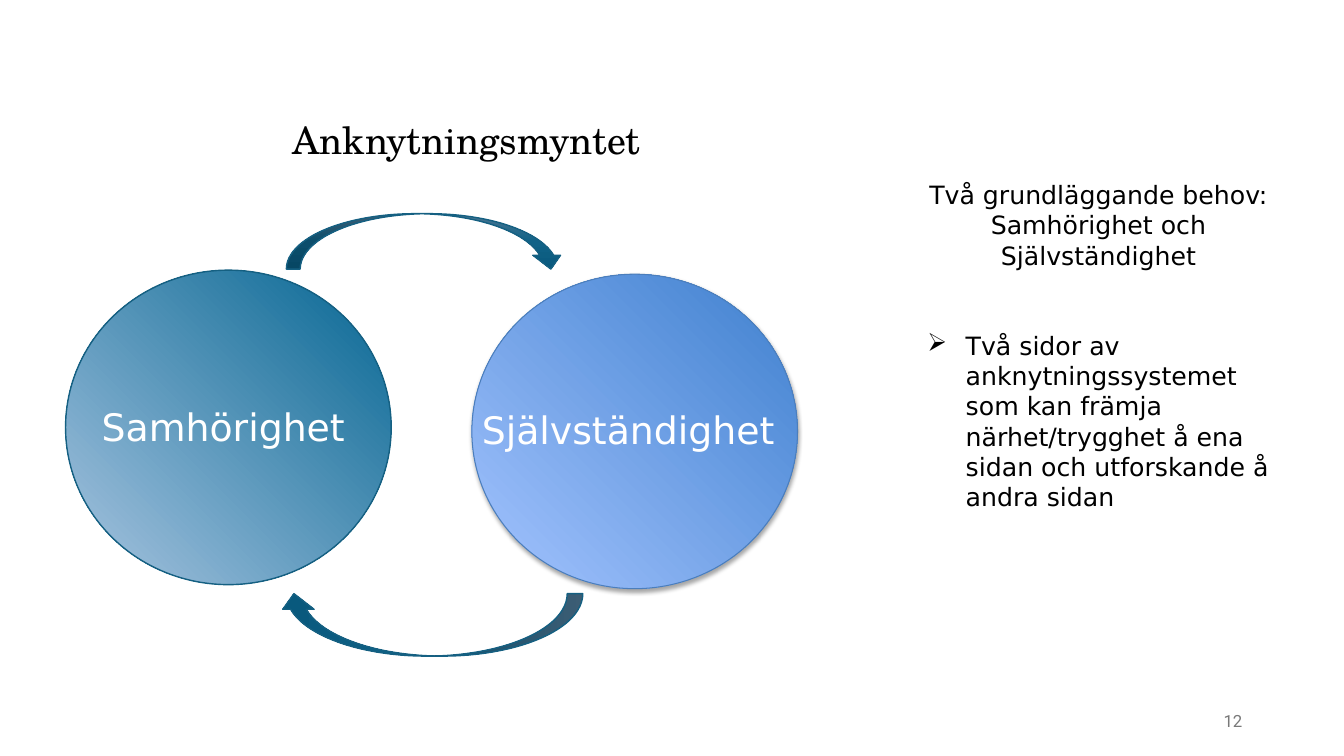
"""Build the attachment-coin slide: two circles of needs joined by curved arrows."""
import copy

import pptx
import pptx.dml.color
import pptx.enum.shapes
import pptx.enum.text
import pptx.oxml
import pptx.oxml.ns
import pptx.util

RGBColor = pptx.dml.color.RGBColor
Pt = pptx.util.Pt
SHAPE = pptx.enum.shapes.MSO_SHAPE
ANCHOR = pptx.enum.text.MSO_ANCHOR
ALIGN = pptx.enum.text.PP_ALIGN
qn = pptx.oxml.ns.qn
NAMESPACE = pptx.oxml.ns.nsdecls("a")

BLACK = RGBColor(0x00, 0x00, 0x00)
WHITE = RGBColor(0xFF, 0xFF, 0xFF)
GREY = RGBColor(0x79, 0x79, 0x79)
TEAL_LINE = RGBColor(0x15, 0x60, 0x82)
BLUE_LINE = RGBColor(0x4B, 0x7E, 0xBC)
TEAL_FADE = [RGBColor(0x05, 0x66, 0x92), RGBColor(0xA9, 0xC5, 0xE1)]
BLUE_FADE = [RGBColor(0x3F, 0x80, 0xCE), RGBColor(0xA4, 0xC4, 0xFF)]
ARROW_FADE = [RGBColor(0x4C, 0x75, 0x91), RGBColor(0x10, 0x62, 0x87), RGBColor(0x09, 0x59, 0x7D)]

deck = pptx.Presentation()
deck.slide_width = pptx.util.Inches(13.33)
deck.slide_height = pptx.util.Inches(7.5)
page = deck.slides.add_slide(deck.slide_layouts[6])


def place(left, top, width, height):
    """Turn percentages of the slide into lengths."""
    column, row = deck.slide_width / 100, deck.slide_height / 100
    return int(left * column), int(top * row), int(width * column), int(height * row)


def add_text(area, paragraphs, font, size, color, anchor=ANCHOR.TOP):
    """Add a wrapped text box and return its paragraphs."""
    frame = page.shapes.add_textbox(*place(*area)).text_frame
    frame.word_wrap = True
    frame.vertical_anchor = anchor
    for number, words in enumerate(paragraphs):
        para = frame.add_paragraph() if number else frame.paragraphs[0]
        span = para.add_run()
        span.text = words
        span.font.name = font
        span.font.size = Pt(size)
        span.font.color.rgb = color
    return frame.paragraphs


figures = [
    (SHAPE.OVAL, (4.88, 35.73, 24.23, 41.6), TEAL_FADE, 225, TEAL_LINE, 1, 0),
    (SHAPE.OVAL, (35.11, 36.27, 24.23, 41.6), BLUE_FADE, 225, BLUE_LINE, 0.75, 0),
    (SHAPE.CURVED_DOWN_ARROW, (21.31, 28.27, 20.71, 7.33), ARROW_FADE, 270, TEAL_LINE, 1, 0),
    (SHAPE.CURVED_LEFT_ARROW, (29.71, 62.53, 4.65, 40.27), ARROW_FADE, 270, TEAL_LINE, 1, 90),
]
for kind, area, fade, angle, line_color, line_width, rotation in figures:
    figure = page.shapes.add_shape(kind, *place(*area))
    figure.rotation = rotation
    figure.shadow.inherit = False
    figure.line.color.rgb = line_color
    figure.line.width = Pt(line_width)
    figure.fill.gradient()
    figure.fill.gradient_angle = angle
    gradient = figure._element.spPr.find(qn("a:gradFill"))
    stops = gradient.find(qn("a:gsLst"))
    while len(stops) < len(fade):
        stops.append(copy.deepcopy(stops[-1]))
    for number, (stop, color) in enumerate(zip(figure.fill.gradient_stops, fade)):
        stop.color.rgb = color
        stop.position = number / (len(fade) - 1)
    if fade is BLUE_FADE:
        radial = pptx.oxml.parse_xml(
            f'<a:path {NAMESPACE} path="circle"><a:fillToRect l="100000" b="100000"/></a:path>')
        gradient.replace(gradient.find(qn("a:lin")), radial)
        shadow = pptx.oxml.parse_xml(
            f'<a:outerShdw {NAMESPACE} blurRad="{Pt(3.1)}" dist="{Pt(1.8)}" dir="5400000" rotWithShape="0">'
            '<a:srgbClr val="000000"><a:alpha val="35000"/></a:srgbClr></a:outerShdw>')
        figure._element.spPr.find(qn("a:effectLst")).append(shadow)

add_text((6.83, 52.8, 20.26, 8.53), ["Samhörighet"], "DejaVu Sans", 27, WHITE)
add_text((35.11, 53.2, 23.56, 7.73), ["Självständighet"], "DejaVu Sans", 27, WHITE)

title = add_text((17.25, 14.8, 82.5, 11.47), ["Anknytningsmyntet"], "TeX Gyre Schola", 27, BLACK)[0]
title._p.get_or_add_pPr().set("indent", str(pptx.util.Inches(0.5)))

needs, sides = add_text((68.27, 23.07, 26.93, 45.73), [
    "Två grundläggande behov: Samhörighet och Självständighet",
    "Två sidor av anknytningssystemet som kan främja närhet/trygghet å ena sidan "
    "och utforskande å andra sidan",
], "DejaVu Sans", 18, BLACK)
needs.alignment = ALIGN.CENTER
sides.space_before = Pt(43)
bullet = sides._p.get_or_add_pPr()
bullet.set("marL", str(pptx.util.Inches(0.38)))
bullet.set("indent", str(pptx.util.Inches(-0.38)))
bullet.append(pptx.oxml.parse_xml(f'<a:buChar {NAMESPACE} char="➢"/>'))

page_number = add_text((70.67, 92.67, 22.51, 5.33), ["12"], "Roboto", 12, GREY, ANCHOR.MIDDLE)[0]
page_number.alignment = ALIGN.RIGHT

deck.save("out.pptx")
